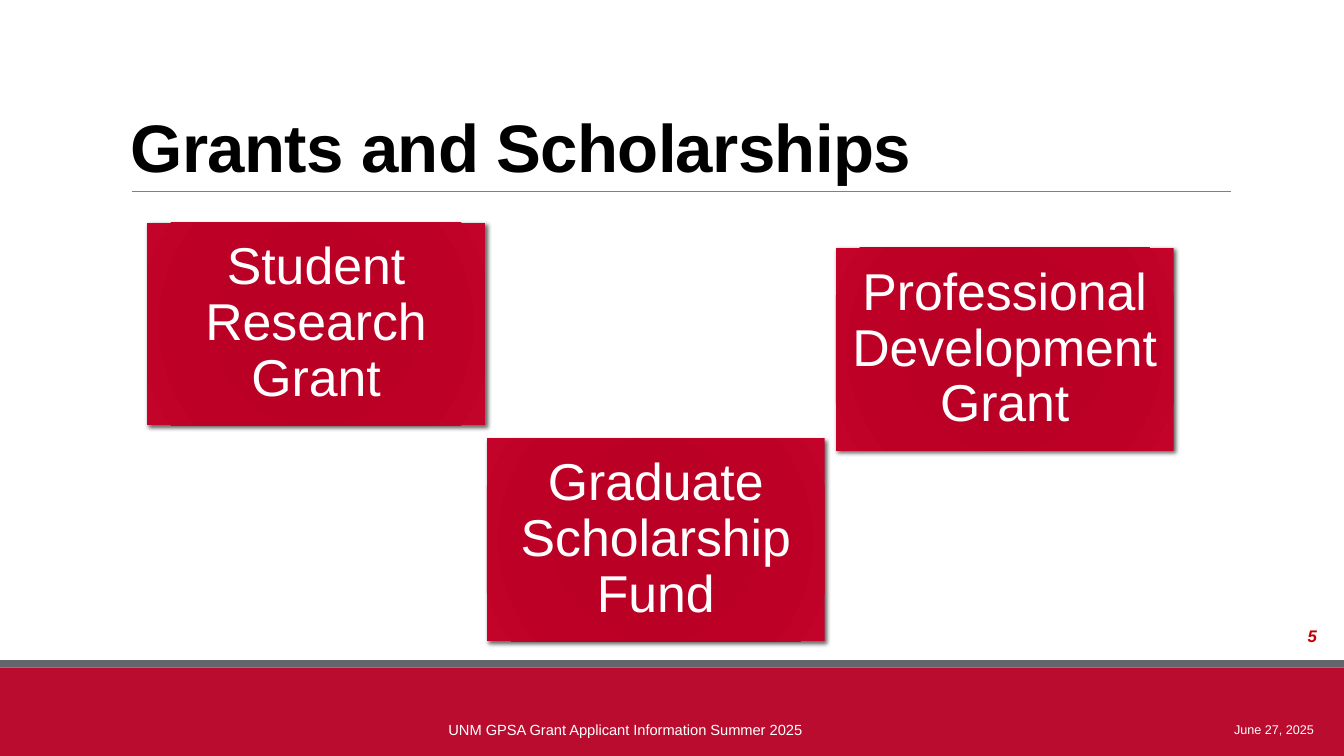
from pptx import Presentation
from pptx.dml.color import RGBColor
from pptx.enum.shapes import MSO_CONNECTOR, MSO_SHAPE
from pptx.enum.text import MSO_ANCHOR, PP_ALIGN
from pptx.oxml import parse_xml
from pptx.oxml.ns import nsdecls, qn
from pptx.util import Inches, Pt
from lxml.etree import SubElement

COLORS = {"band": "BA0C2F", "stripe": "63666A", "rule": "808080", "card": "BA0025",
          "page": "C00000", "black": "000000", "white": "FFFFFF"}
STOPS = [(0, "B80025"), (34, "BA0025"), (70, "BD0026"), (100, "C3032A")]
CARDS = [("Student Research Grant", 1.46, 2.21),
         ("Professional Development Grant", 8.29, 2.46),
         ("Graduate Scholarship Fund", 4.83, 4.35)]


def rgb(name):
    """Return the named colour."""
    return RGBColor.from_string(COLORS[name])


def add_bar(slide, left, top, width, height, color):
    """Add a plain filled rectangle."""
    bar = slide.shapes.add_shape(MSO_SHAPE.RECTANGLE, Inches(left), Inches(top),
                                 Inches(width), Inches(height))
    bar.shadow.inherit = False
    bar.fill.solid()
    bar.fill.fore_color.rgb = rgb(color)
    bar.line.fill.background()
    return bar


def add_rule(slide, left, right, top):
    """Add the thin line below the title."""
    rule = slide.shapes.add_connector(MSO_CONNECTOR.STRAIGHT, Inches(left), Inches(top),
                                      Inches(right), Inches(top))
    rule.line.color.rgb = rgb("rule")
    rule.line.width = Pt(0.5)
    SubElement(rule._element.spPr, qn("a:effectLst"))


def set_text(shape, text, size, color, align=PP_ALIGN.LEFT, anchor=MSO_ANCHOR.MIDDLE,
             bold=False, italic=False, spacing=1.0):
    """Write one styled paragraph and return its run."""
    frame = shape.text_frame
    frame.text = text
    frame.word_wrap = True
    frame.vertical_anchor = anchor
    para = frame.paragraphs[0]
    para.alignment = align
    para.line_spacing = spacing
    run = para.runs[0]
    font = run.font
    font.name, font.size = "Arial", Pt(size)
    font.bold, font.italic = bold, italic
    font.color.rgb = rgb(color)
    return run


def add_label(slide, text, left, top, width, height, size, color, **style):
    """Add a text box and return its run."""
    box = slide.shapes.add_textbox(Inches(left), Inches(top), Inches(width), Inches(height))
    return set_text(box, text, size, color, **style)


def add_glow(shape):
    """Give a card its radial gradient and soft shadow."""
    stops = "".join(f'<a:gs pos="{pos * 1000}"><a:srgbClr val="{color}"/></a:gs>'
                    for pos, color in STOPS)
    grad = parse_xml(f'<a:gradFill {nsdecls("a")} rotWithShape="1"><a:gsLst>{stops}</a:gsLst>'
                     '<a:path path="circle"><a:fillToRect l="100000" t="100000" '
                     'r="100000" b="100000"/></a:path></a:gradFill>')
    props = shape._element.spPr
    props.replace(props.find(qn("a:solidFill")), grad)
    props.find(qn("a:effectLst")).append(parse_xml(
        f'<a:outerShdw {nsdecls("a")} blurRad="{Pt(3)}" dist="{Pt(2)}" dir="2700000" '
        'rotWithShape="0"><a:srgbClr val="000000"><a:alpha val="60000"/></a:srgbClr>'
        '</a:outerShdw>'))


def add_card(slide, text, left, top):
    """Add one grant card."""
    card = add_bar(slide, left, top, 3.35, 2.01, "card")
    add_glow(card)
    frame = card.text_frame
    frame.margin_left = frame.margin_right = Inches(0.15)
    frame.margin_top = frame.margin_bottom = Inches(0.15)
    set_text(card, text, 37, "white", align=PP_ALIGN.CENTER, spacing=0.9)


def main():
    """Build and save the slide."""
    deck = Presentation()
    deck.slide_width, deck.slide_height = Inches(13.33), Inches(7.5)
    slide = deck.slides.add_slide(deck.slide_layouts[6])
    add_bar(slide, 0, 6.62, 13.33, 0.88, "band")
    add_bar(slide, 0, 6.55, 13.33, 0.07, "stripe")
    add_rule(slide, 1.31, 12.21, 1.9)
    title = add_label(slide, "Grants and Scholarships", 1.2, 0.31, 11, 1.59, 48, "black",
                      anchor=MSO_ANCHOR.BOTTOM, bold=True, spacing=0.85)
    title._r.get_or_add_rPr().set("spc", "-50")
    for text, left, top in CARDS:
        add_card(slide, text, left, top)
    add_label(slide, "5", 12.87, 6.16, 0.57, 0.3, 12, "page",
              anchor=MSO_ANCHOR.TOP, bold=True, italic=True)
    add_label(slide, "UNM GPSA Grant Applicant Information Summer 2025",
              4.13, 7.04, 4.15, 0.4, 10.5, "white", align=PP_ALIGN.CENTER)
    add_label(slide, "June 27, 2025", 11.85, 7.04, 1.28, 0.4, 9, "white",
              align=PP_ALIGN.RIGHT)
    deck.save("out.pptx")


if __name__ == "__main__":
    main()
